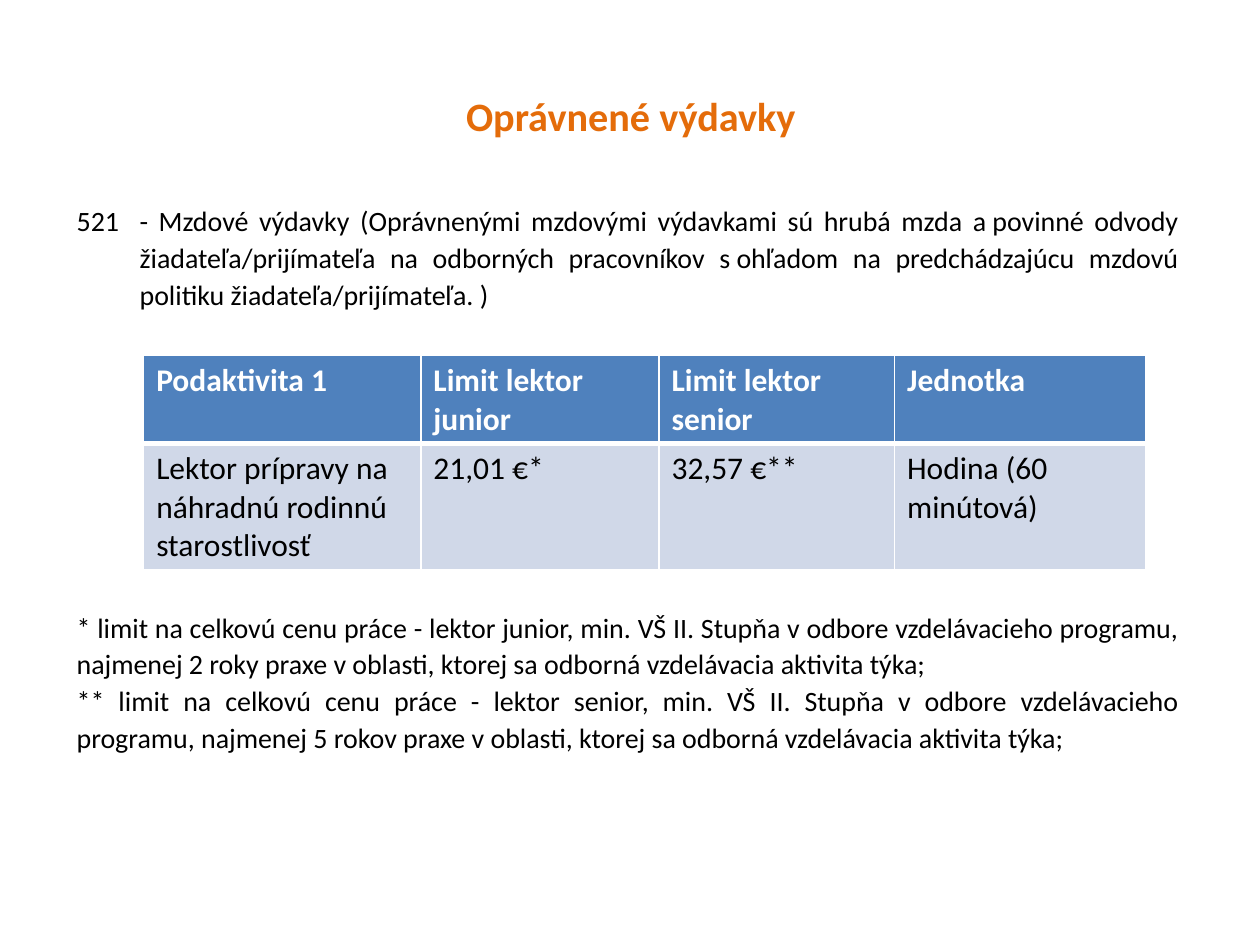
import pptx
import pptx.dml.color
import pptx.enum.text
import pptx.util
from dataclasses import dataclass
from lxml import etree
from pptx.oxml.ns import qn

ALIGN = pptx.enum.text.PP_ALIGN
ANCHOR = pptx.enum.text.MSO_ANCHOR


@dataclass(frozen=True)
class Theme:
    font: str = "Calibri"
    accent: str = "E46C0A"
    text: str = "000000"
    light: str = "FFFFFF"
    header: str = "4F81BD"
    row: str = "D0D8E8"
    title_size: float = 23
    body_size: float = 16
    table_size: float = 18


class Deck:
    COLS, ROWS = 100, 75

    def __init__(self, theme):
        self.theme = theme
        self.prs = pptx.Presentation()
        self.prs.slide_width = pptx.util.Inches(10)
        self.prs.slide_height = pptx.util.Inches(7.5)
        self.s = self.prs.slides.add_slide(self.prs.slide_layouts[6])

    def x(self, cols):
        return round(self.prs.slide_width * cols / self.COLS)

    def y(self, rows):
        return round(self.prs.slide_height * rows / self.ROWS)

    def style(self, p, size, color, bold=False):
        for r in p.runs:
            r.font.name = self.theme.font
            r.font.size = pptx.util.Pt(size)
            r.font.bold = bold
            r.font.color.rgb = pptx.dml.color.RGBColor.from_string(color)

    def text(self, left, top, width, height, lines, size, color,
             bold=False, align=ALIGN.JUSTIFY, anchor=ANCHOR.TOP, spacing=1.0):
        sp = self.s.shapes.add_textbox(self.x(left), self.y(top),
                                       self.x(width), self.y(height))
        tf = sp.text_frame
        tf.word_wrap = True
        tf.vertical_anchor = anchor
        tf.text = "\n".join(lines)
        for p in tf.paragraphs:
            p.alignment = align
            p.line_spacing = spacing
            self.style(p, size, color, bold)
        return tf.paragraphs

    def number(self, p, start, indent):
        pPr = p._p.get_or_add_pPr()
        pPr.set("marL", str(self.x(indent)))
        pPr.set("indent", str(-self.x(indent)))
        etree.SubElement(pPr, qn("a:buFont"), typeface="+mj-lt")
        etree.SubElement(pPr, qn("a:buAutoNum"), type="arabicPlain",
                         startAt=str(start))

    def borders(self, cell, **widths):
        tcPr = cell._tc.get_or_add_tcPr()
        for side in "LRTB":
            width = pptx.util.Pt(widths.get(side, 1))
            ln = etree.SubElement(tcPr, qn(f"a:ln{side}"), w=str(width))
            fill = etree.SubElement(ln, qn("a:solidFill"))
            etree.SubElement(fill, qn("a:srgbClr"), val=self.theme.light)

    def table(self, left, top, widths, heights, rows):
        t = self.theme
        table = self.s.shapes.add_table(
            len(rows), len(widths), self.x(left), self.y(top),
            self.x(sum(widths)), self.y(sum(heights))).table
        for column, width in zip(table.columns, widths):
            column.width = self.x(width)
        for i, (row, height) in enumerate(zip(rows, heights)):
            table.rows[i].height = self.y(height)
            head = i == 0
            for j, value in enumerate(row):
                cell = table.cell(i, j)
                self.borders(cell, **({"B": 3} if head else {"T": 3}))
                cell.fill.solid()
                cell.fill.fore_color.rgb = pptx.dml.color.RGBColor.from_string(
                    t.header if head else t.row)
                cell.text_frame.text = value
                self.style(cell.text_frame.paragraphs[0], t.table_size,
                           t.light if head else t.text, head)


def main():
    theme = Theme()
    deck = Deck(theme)

    # Numbered expense and the footnotes below the table
    expense, junior, senior = deck.text(5.1, 15.4, 89.5, 48.9, [
        "- Mzdové výdavky (Oprávnenými mzdovými výdavkami sú hrubá mzda "
        "a\u00a0povinné odvody žiadateľa/prijímateľa na odborných pracovníkov "
        "s\u00a0ohľadom na predchádzajúcu mzdovú politiku "
        "žiadateľa/prijímateľa. )",
        "* limit na celkovú cenu práce - lektor junior, min. VŠ II. Stupňa "
        "v odbore vzdelávacieho programu, najmenej 2 roky praxe v oblasti, "
        "ktorej sa odborná vzdelávacia aktivita týka;",
        "** limit na celkovú cenu práce - lektor senior, min. VŠ II. Stupňa "
        "v odbore vzdelávacieho programu, najmenej 5 rokov praxe v oblasti, "
        "ktorej sa odborná vzdelávacia aktivita týka;",
    ], theme.body_size, theme.text, spacing=1.1)
    deck.number(expense, 521, 5)
    junior.space_before = pptx.util.Pt(169)

    # Title
    deck.text(5.1, 2.9, 90, 12.5, ["Oprávnené výdavky"], theme.title_size,
              theme.accent, bold=True, align=ALIGN.CENTER,
              anchor=ANCHOR.MIDDLE)

    # Hourly limits
    deck.table(11.4, 28.2, [22, 18.9, 18.7, 19.9], [7, 10], [
        ["Podaktivita 1", "Limit lektor junior", "Limit lektor senior",
         "Jednotka"],
        ["Lektor prípravy na náhradnú rodinnú starostlivosť", "21,01 €*",
         "32,57 €**", "Hodina (60 minútová)"],
    ])

    deck.prs.save("out.pptx")


if __name__ == "__main__":
    main()
